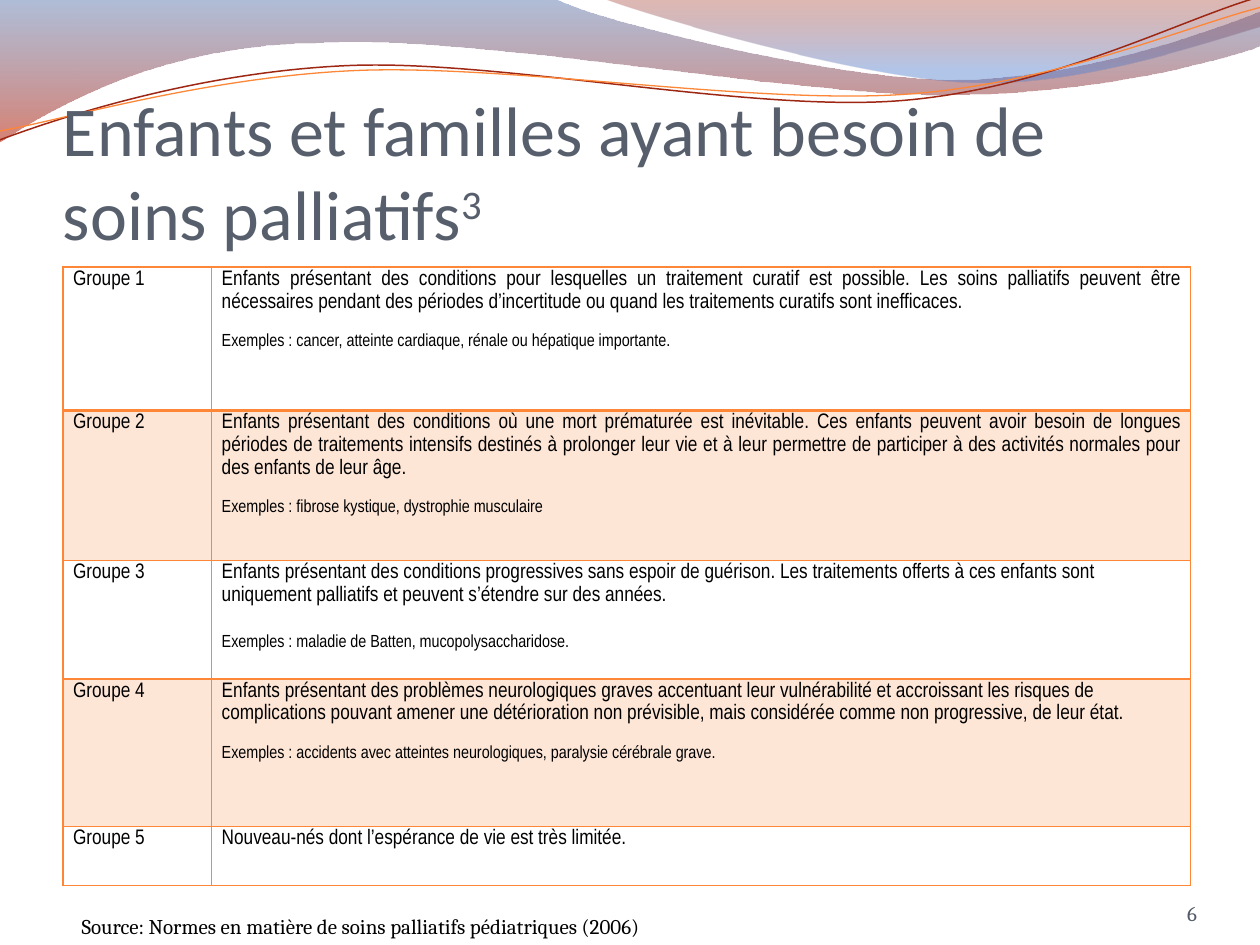
import math
from dataclasses import dataclass

from lxml import etree
from pptx import Presentation, util as u
from pptx.dml.color import RGBColor
from pptx.enum import text
from pptx.oxml import ns


@dataclass(frozen=True)
class Theme:
    orange: str = "FE8637"
    dark_red: str = "9E2713"
    title: str = "575F6D"
    number: str = "535B68"
    ink: str = "000000"
    title_size: int = 40
    body_size: int = 12
    example_size: int = 10


theme = Theme()


def set_alpha(element, percents):
    """Give each solid colour in the element its opacity, in order."""
    for color, percent in zip(element.iter(ns.qn("a:srgbClr")), percents):
        etree.SubElement(color, ns.qn("a:alpha"), val=str(percent * 1000))


def style(para, font, size, color):
    for span in para.runs:
        span.font.name = font
        span.font.size = u.Pt(size)
        span.font.color.rgb = RGBColor.from_string(color)


deck = Presentation()
deck.slide_width, deck.slide_height = u.Inches(10), u.Inches(7.5)
page = deck.slides.add_slide(deck.slide_layouts[6])

# Header waves: each step is a straight point (x, y) or a Bezier curve of three points
upper_wave = [
    (0, -0.01), (4.4, -0.01), (4.76, 0.17, 6.64, 0.63, 7.58, 0.63),
    (8.53, 0.63, 9.58, 0.26, 10, 0.09), (10.01, 0.36),
    (9.83, 0.44, 8.7, 0.76, 7.46, 0.75), (6.22, 0.75, 3.82, 0.28, 2.57, 0.34),
    (1.29, 0.35, 0.46, 0.83, -0.01, 1.13),
]
right_wave = [
    (4.79, -0.01), (5.09, 0.11, 6.82, 0.62, 7.69, 0.65),
    (8.56, 0.69, 9.61, 0.32, 10, 0.21), (10, 0),
]
red_line = [
    (0, 1.11), (0.48, 0.93, 1.58, 0.57, 2.77, 0.52),
    (3.95, 0.47, 5.93, 0.89, 7.13, 0.8), (8.33, 0.71, 9.38, 0.15, 9.98, -0.02),
]
orange_line = [
    (0, 1.04), (0.47, 0.96, 1.64, 0.61, 2.83, 0.56),
    (4.03, 0.51, 5.97, 0.83, 7.17, 0.75), (8.36, 0.67, 9.41, 0.21, 10, 0.06),
]
# Steps, gradient stops (position, colour, opacity), line (colour, width), centre of the tilt
waves = [
    (upper_wave, [(0, "4F6EA8", 45), (1, "B61A00", 55)], None, None),
    (right_wave, [(0, "951500", 30), (0.8, "5681D1", 45)], None, None),
    (red_line, None, (theme.dark_red, 0.85), (4.99, 0.57)),
    (orange_line, None, (theme.orange, 0.75), (5, 0.59)),
]
TILT = 2.7
sine, cosine = math.sin(math.radians(TILT)), math.cos(math.radians(TILT))
for steps, stops, line, center in waves:
    points = [step[i:i + 2] for step in steps for i in range(0, len(step), 2)]
    if center:
        cx, cy = center
        points = [
            (cx + (x - cx) * cosine - (y - cy) * sine, cy + (x - cx) * sine + (y - cy) * cosine)
            for x, y in points
        ]
    points = [(u.Inches(x), u.Inches(y)) for x, y in points]
    builder = page.shapes.build_freeform(*points[0])
    builder.add_line_segments(points[1:], close=stops is not None)
    wave = builder.convert_to_shape()
    wave.shadow.inherit = False

    # Join the three segments of each curve into one Bezier
    segments = iter(list(wave._element.iter(ns.qn("a:lnTo"))))
    for step in steps[1:]:
        segment = next(segments)
        if len(step) == 6:
            segment.tag = ns.qn("a:cubicBezTo")
            for _ in range(2):
                extra = next(segments)
                segment.append(extra[0])
                extra.getparent().remove(extra)

    if stops:
        wave.fill.gradient()
        wave.fill.gradient_angle = 270
        for stop, (position, color, _) in zip(wave.fill.gradient_stops, stops):
            stop.position = position
            stop.color.rgb = RGBColor.from_string(color)
        set_alpha(wave.fill._xPr, [opacity for _, _, opacity in stops])
        wave.line.fill.background()
    else:
        wave.rotation = 360 - TILT
        wave.fill.background()
        wave.line.color.rgb = RGBColor.from_string(line[0])
        wave.line.width = u.Pt(line[1])

# Title, source and page number: wording, place, insets, anchor, alignment, font, size, colour
top, bottom = text.MSO_ANCHOR.TOP, text.MSO_ANCHOR.BOTTOM
left, right = text.PP_ALIGN.LEFT, text.PP_ALIGN.RIGHT
labels = [
    ("Enfants et familles ayant besoin de soins palliatifs", (0.5, 0.77, 9, 1.25),
     (0, 0.05, 0, 0), bottom, left, "Calibri", theme.title_size, theme.title),
    ("Source: Normes en matière de soins palliatifs pédiatriques (2006)",
     (0.55, 7.2, 7.5, 0.3), (0.1, 0.05, 0.1, 0.05), top, left,
     "Cambria", theme.body_size, theme.ink),
    ("6", (8.67, 6.95, 0.83, 0.4), (0, 0, 0, 0), bottom, right,
     "Cambria", theme.body_size, theme.number),
]
for wording, place, insets, anchor, align, font, size, color in labels:
    box = page.shapes.add_textbox(*map(u.Inches, place))
    frame = box.text_frame
    frame.word_wrap = True
    frame.vertical_anchor = anchor
    (frame.margin_left, frame.margin_top,
     frame.margin_right, frame.margin_bottom) = map(u.Inches, insets)
    frame.text = wording
    para = frame.paragraphs[0]
    para.alignment = align
    if size == theme.title_size:
        note = para.add_run()
        note.text = "3"
        note._r.get_or_add_rPr().set("baseline", "30000")
    style(para, font, size, color)

# Table of groups: row height, justified paragraphs, gap before the examples, paragraphs
groups = [
    (1.14, 2, 11, [
        "Enfants présentant des conditions pour lesquelles un traitement curatif est possible. "
        "Les soins palliatifs peuvent être nécessaires pendant des périodes d’incertitude ou "
        "quand les traitements curatifs sont inefficaces.",
        "Exemples : cancer, atteinte cardiaque, rénale ou hépatique importante."]),
    (1.19, 1, 11, [
        "Enfants présentant des conditions où une mort prématurée est inévitable. Ces enfants "
        "peuvent avoir besoin de longues périodes de traitements intensifs destinés à prolonger "
        "leur vie et à leur permettre de participer à des activités normales pour des enfants "
        "de leur âge.",
        "Exemples : fibrose kystique, dystrophie musculaire"]),
    (0.94, 0, 15, [
        "Enfants présentant des conditions progressives sans espoir de guérison. Les traitements "
        "offerts à ces enfants sont uniquement palliatifs et peuvent s’étendre sur des années.",
        "Exemples : maladie de Batten, mucopolysaccharidose."]),
    (1.17, 0, 11, [
        "Enfants présentant des problèmes neurologiques graves accentuant leur vulnérabilité et "
        "accroissant les risques de complications pouvant amener une détérioration non "
        "prévisible, mais considérée comme non progressive, de leur état.",
        "Exemples : accidents avec atteintes neurologiques, paralysie cérébrale grave."]),
    (0.47, 0, 0, ["Nouveau-nés dont l’espérance de vie est très limitée."]),
]
table = page.shapes.add_table(
    len(groups), 2, u.Inches(0.5), u.Inches(2.12), u.Inches(8.95), u.Inches(4.91)
).table
table.first_row = table.horz_banding = False
# Plain table style without a grid of its own
style_id = next(table._tbl.iter(ns.qn("a:tableStyleId")))
style_id.text = "{2D5ABB26-0587-4C30-8999-92F81FD0307C}"
for column, width in zip(table.columns, (1.18, 7.77)):
    column.width = u.Inches(width)

for row, (height, justified, gap, description) in enumerate(groups):
    table.rows[row].height = u.Inches(height)
    for col, paragraphs in enumerate(([f"Groupe {row + 1}"], description)):
        cell = table.cell(row, col)
        cell.margin_left, cell.margin_right = u.Inches(0.08), u.Inches(0.07)
        cell.margin_top = cell.margin_bottom = 0
        cell.text_frame.text = "\n".join(paragraphs)
        for index, para in enumerate(cell.text_frame.paragraphs):
            para.line_spacing = 1.15
            if col == 1 and index < justified:
                para.alignment = text.PP_ALIGN.JUSTIFY
            if index:
                para.space_before = u.Pt(gap)
            size = theme.example_size if index else theme.body_size
            style(para, "Arial Narrow", size, theme.ink)

        # Tint of every second row, then the borders
        properties = cell._tc.get_or_add_tcPr()
        if row % 2:
            cell.fill.solid()
            cell.fill.fore_color.rgb = RGBColor.from_string(theme.orange)
            set_alpha(properties, [20])
        else:
            cell.fill.background()
        for index, side in enumerate(("lnL", "lnR", "lnT", "lnB")):
            thick = (row, side) in ((0, "lnB"), (1, "lnT"))
            border = etree.Element(ns.qn(f"a:{side}"), w=str(u.Pt(2 if thick else 1)))
            solid = etree.SubElement(border, ns.qn("a:solidFill"))
            etree.SubElement(solid, ns.qn("a:srgbClr"), val=theme.orange)
            properties.insert(index, border)

deck.save("out.pptx")
